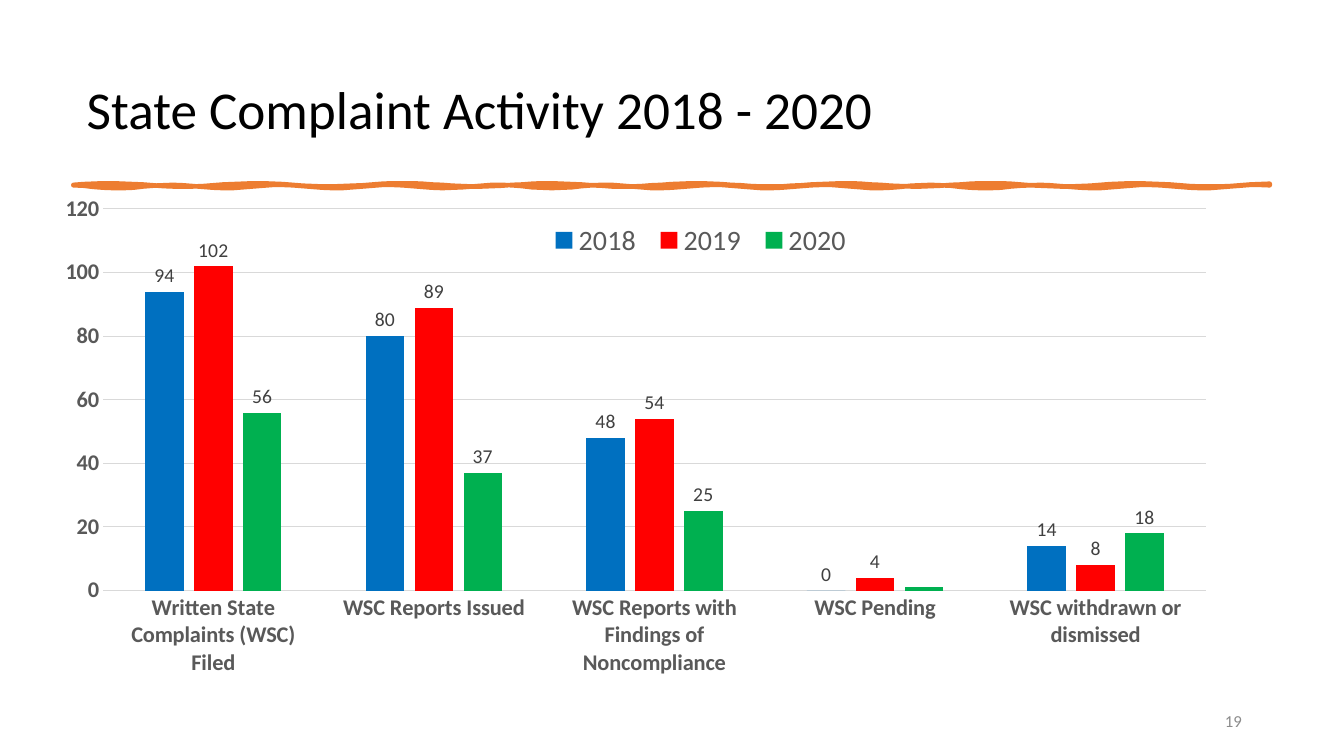
from math import sin

from lxml import etree
from pptx import Presentation
from pptx import util as u
from pptx.chart.data import CategoryChartData
from pptx.dml.color import RGBColor
from pptx.enum import chart as charts, text
from pptx.oxml import ns

BLACK = RGBColor(0x00, 0x00, 0x00)
DARK = RGBColor(0x40, 0x40, 0x40)
GRAY = RGBColor(0x59, 0x59, 0x59)
PALE = RGBColor(0x8C, 0x8C, 0x8C)
GRID = RGBColor(0xD9, 0xD9, 0xD9)
ORANGE = RGBColor(0xED, 0x7D, 0x31)
BLUE = RGBColor(0x00, 0x70, 0xC0)
RED = RGBColor(0xFF, 0x00, 0x00)
GREEN = RGBColor(0x00, 0xB0, 0x50)

CATEGORIES = [
    "Written State Complaints (WSC) Filed",
    "WSC Reports Issued",
    "WSC Reports with Findings of Noncompliance",
    "WSC Pending",
    "WSC withdrawn or dismissed",
]
COMPLAINTS = {
    "2018": ([94, 80, 48, 0, 14], BLUE),
    "2019": ([102, 89, 54, 4, 8], RED),
    "2020": ([56, 37, 25, 1, 18], GREEN),
}
UNLABELLED = ("2020", CATEGORIES.index("WSC Pending"))


class SlideBuilder:
    """Holds the font and the current slide, and draws each kind of element."""

    def __init__(self, deck, font="Calibri"):
        self.font_name = font
        self.slide = deck.slides.add_slide(deck.slide_layouts[5])

    def style(self, font, size, color, bold=False):
        font.name, font.size, font.bold = self.font_name, u.Pt(size), bold
        font.color.rgb = color

    def fill_text(self, box, wording, size, color, align):
        frame = box.text_frame
        frame.text = wording
        frame.word_wrap = True
        frame.vertical_anchor = text.MSO_ANCHOR.MIDDLE
        para = frame.paragraphs[0]
        para.alignment = align
        self.style(para.runs[0].font, size, color)
        return para

    def title(self, wording):
        box = self.slide.shapes.title
        box.left, box.top = u.Cm(1.93), u.Cm(1.02)
        box.width, box.height = u.Cm(29.62), u.Cm(3.63)
        para = self.fill_text(box, wording, 38, BLACK, text.PP_ALIGN.LEFT)
        para.line_spacing = 0.9

    def page_number(self, number):
        box = self.slide.shapes.add_textbox(
            u.Cm(23.93), u.Cm(17.65), u.Cm(7.62), u.Cm(1.02))
        self.fill_text(box, number, 12, PALE, text.PP_ALIGN.RIGHT)

    def brush_line(self, left, right, top, bottom, wave=0.04):
        stations = [left + (right - left) * i / 120 for i in range(121)]
        upper = [(x, top + wave * sin(1.7 * x)) for x in stations]
        lower = [(x, bottom + wave * sin(2.3 * x + 1)) for x in stations]
        outline = [(round(x * 100), round(y * 100))
                   for x, y in upper + lower[::-1]]
        builder = self.slide.shapes.build_freeform(*outline[0], scale=u.Cm(0.01))
        builder.add_line_segments(outline[1:], close=True)
        stroke = builder.convert_to_shape()
        stroke.shadow.inherit = False
        stroke.fill.solid()
        stroke.fill.fore_color.rgb = ORANGE
        stroke.line.color.rgb = ORANGE
        stroke.line.width = u.Pt(3.25)

    def place(self, part, inner, **fractions):
        layout = part.find(ns.qn("c:layout"))
        if layout is None:
            layout = etree.Element(ns.qn("c:layout"))
            position = part.find(ns.qn("c:legendPos"))
            part.insert(0 if position is None else 1, layout)
        manual = etree.SubElement(layout, ns.qn("c:manualLayout"))
        settings = {"layoutTarget": "inner"} if inner else {}
        settings.update(xMode="edge", yMode="edge", **fractions)
        for name, value in settings.items():
            etree.SubElement(manual, ns.qn("c:" + name)).set("val", str(value))

    def column_chart(self):
        data = CategoryChartData()
        data.categories = CATEGORIES
        for year, (values, _) in COMPLAINTS.items():
            data.add_series(year, values)
        chart = self.slide.shapes.add_chart(
            charts.XL_CHART_TYPE.COLUMN_CLUSTERED, u.Cm(1.04), u.Cm(4.65),
            u.Cm(29.95), u.Cm(14.02), data).chart
        self.style(chart.font, 10, BLACK)
        chart.has_title = False
        plot = chart.plots[0]
        plot.gap_width, plot.overlap, plot.vary_by_categories = 219, -27, False
        for series in plot.series:
            series.format.fill.solid()
            series.format.fill.fore_color.rgb = COMPLAINTS[series.name][1]
            self.label(series)
        self.axes(chart)
        self.legend(chart)
        plot_area = chart.element.find(".//" + ns.qn("c:plotArea"))
        self.place(plot_area, True, x=0.052, y=0.044, w=0.928, h=0.686)

    def label(self, series):
        labels = series.data_labels
        labels.show_value = True
        labels.position = charts.XL_LABEL_POSITION.OUTSIDE_END
        self.style(labels.font, 14, DARK)
        if series.name == UNLABELLED[0]:
            hidden = etree.Element(ns.qn("c:dLbl"))
            for name, value in (("idx", UNLABELLED[1]), ("delete", 1)):
                etree.SubElement(hidden, ns.qn("c:" + name)).set("val", str(value))
            series.data_labels._element.insert(0, hidden)

    def axes(self, chart):
        for axis in (chart.category_axis, chart.value_axis):
            axis.major_tick_mark = charts.XL_TICK_MARK.NONE
            axis.minor_tick_mark = charts.XL_TICK_MARK.NONE
            self.style(axis.tick_labels.font, 16, GRAY, bold=True)
        values = chart.value_axis
        values.minimum_scale, values.maximum_scale = 0, 120
        values.major_unit = 20
        values.format.line.fill.background()
        values.has_major_gridlines = True
        for line in (chart.category_axis.format.line,
                     values.major_gridlines.format.line):
            line.color.rgb = GRID
            line.width = u.Pt(0.75)

    def legend(self, chart):
        chart.has_legend = True
        legend = chart.legend
        legend.position = charts.XL_LEGEND_POSITION.BOTTOM
        legend.include_in_layout = False
        self.style(legend.font, 20, GRAY)
        self.place(legend._element, False, x=0.42, y=0.06, w=0.27, h=0.08)


def main():
    deck = Presentation()
    deck.slide_width, deck.slide_height = u.Cm(33.87), u.Cm(19.05)
    builder = SlideBuilder(deck)
    builder.title("State Complaint Activity 2018 - 2020")
    builder.brush_line(left=1.85, right=32, top=4.66, bottom=4.7)
    builder.page_number("19")
    builder.column_chart()
    deck.save("out.pptx")


if __name__ == "__main__":
    main()
